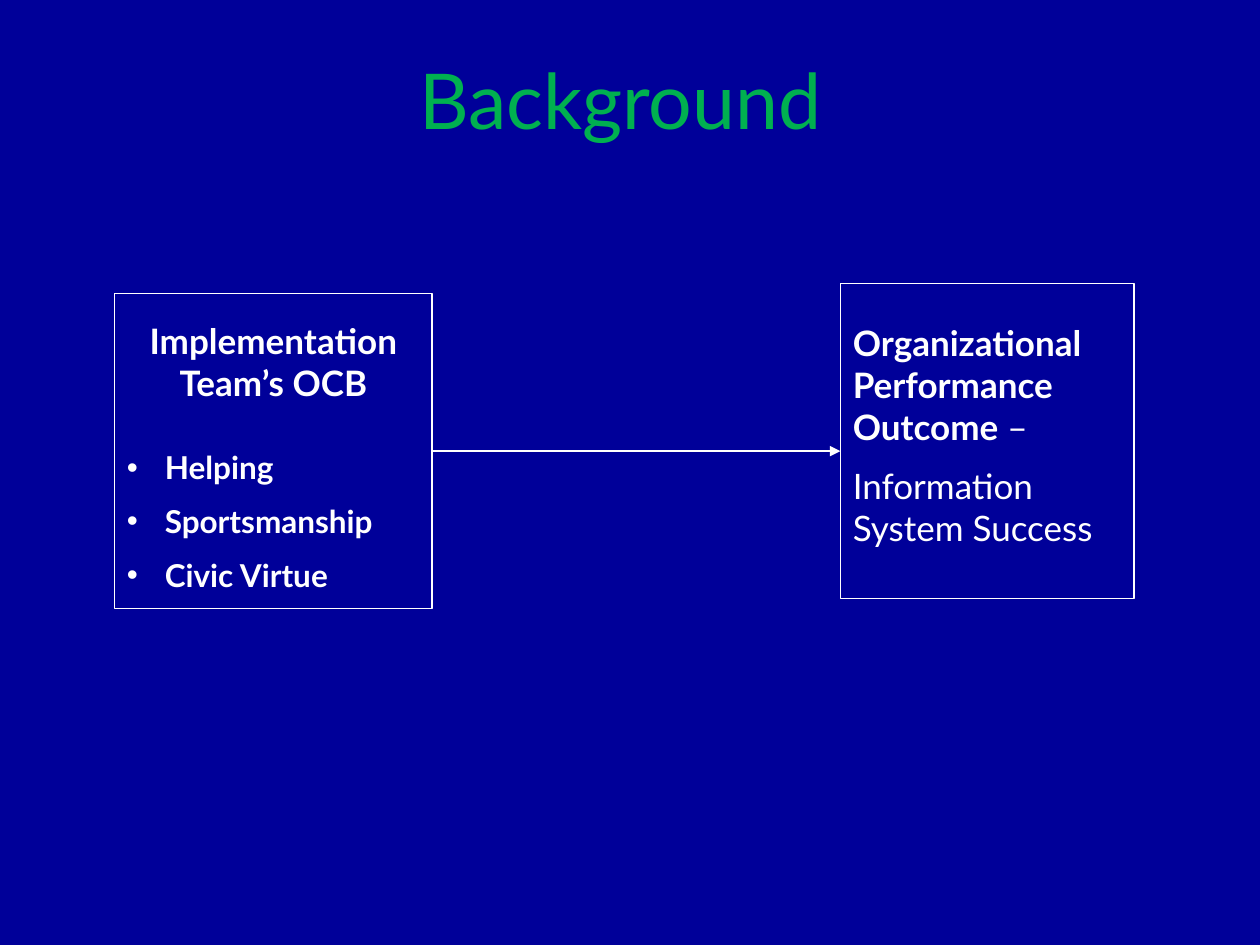
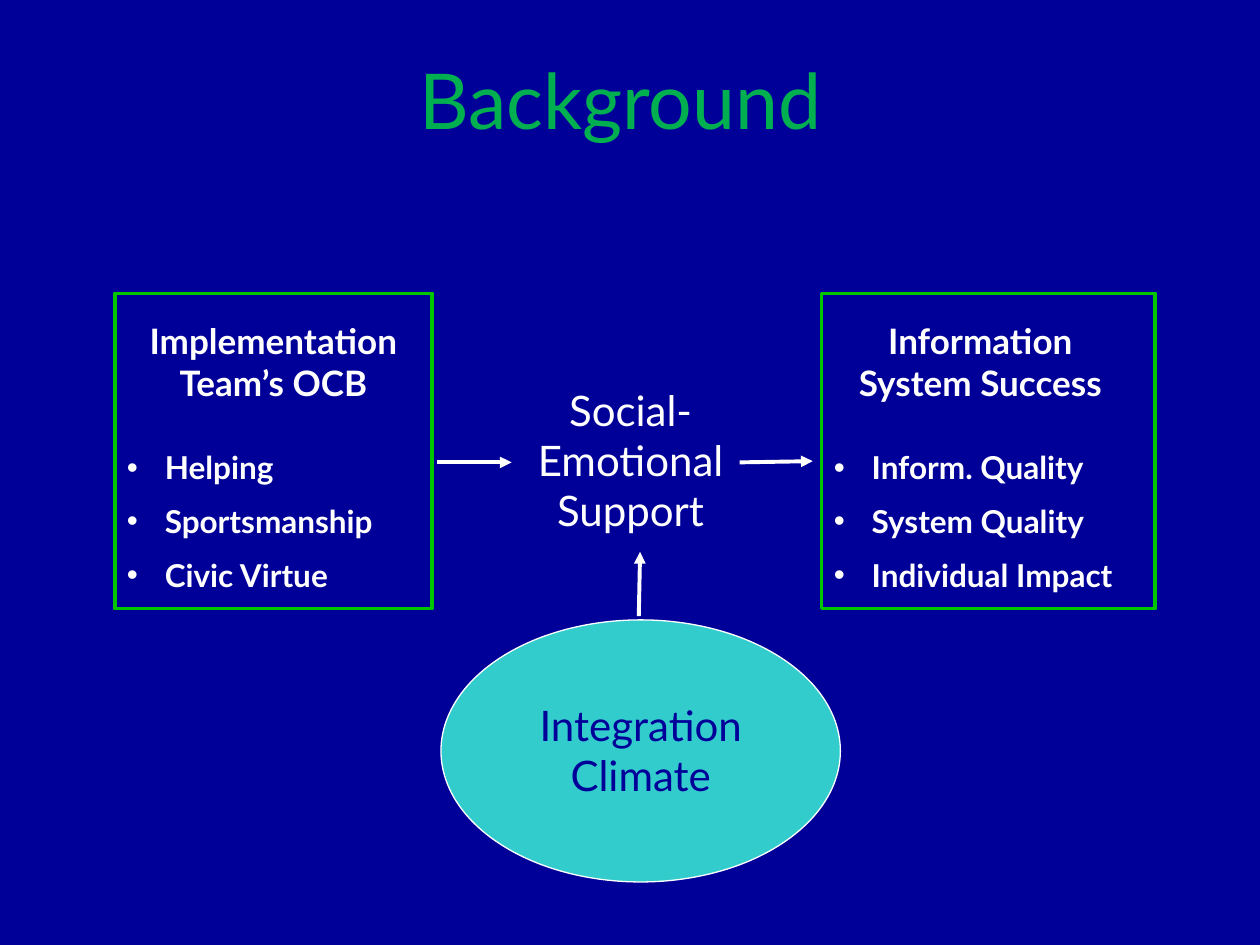
import pptx
import pptx.util
import pptx.dml.color
import pptx.enum.shapes
import pptx.enum.text
import pptx.oxml.ns
from lxml import etree

Inches = pptx.util.Inches
Pt = pptx.util.Pt
SHAPE = pptx.enum.shapes.MSO_SHAPE
ALIGN = pptx.enum.text.PP_ALIGN
ANCHOR = pptx.enum.text.MSO_ANCHOR
AUTO_SIZE = pptx.enum.text.MSO_AUTO_SIZE
qn = pptx.oxml.ns.qn

NAVY, WHITE, TITLE_GREEN = "000099", "FFFFFF", "00B050"
FRAME_GREEN, TEAL = "00C600", "33CCCC"
FONT = "Lato"
THIN, THICK = 0.75, 2.25
BULLET_INDENT = 0.3

OCB_HEADING = "Implementation Team’s OCB"
OCB_PARTS = ["Helping", "Sportsmanship", "Civic Virtue"]
OCB_BOX = (0.91, 2.33, 2.52, 2.5)


def color(hex_code):
    return pptx.dml.color.RGBColor.from_string(hex_code)


def add_bullet(paragraph):
    props = paragraph._p.get_or_add_pPr()
    indent = Inches(BULLET_INDENT)
    props.set("marL", str(indent))
    props.set("indent", str(-indent))
    etree.SubElement(props, qn("a:buFont"), typeface="Arial")
    etree.SubElement(props, qn("a:buChar"), char="•")


def write(shape, paragraphs, size, ink=WHITE, bold=False, align=ALIGN.LEFT,
          anchor=ANCHOR.TOP, bullets=False, grow=True):
    """Each paragraph is a string or a list of (text, bold) runs."""
    frame = shape.text_frame
    frame.word_wrap = True
    frame.vertical_anchor = anchor
    frame.auto_size = AUTO_SIZE.SHAPE_TO_FIT_TEXT if grow else AUTO_SIZE.NONE
    for index, content in enumerate(paragraphs):
        paragraph = frame.add_paragraph() if index else frame.paragraphs[0]
        paragraph.alignment = align
        if index:
            paragraph.space_before = Pt(size / 2)
        if bullets:
            add_bullet(paragraph)
        runs = [(content, bold)] if isinstance(content, str) else content
        for text, run_bold in runs:
            run = paragraph.add_run()
            run.text = text
            look = {"name": FONT, "size": Pt(size), "bold": run_bold}
            for key, value in look.items():
                setattr(run.font, key, value)
            run.font.color.rgb = color(ink)


def add_text(shapes, box, paragraphs, size, **look):
    write(shapes.add_textbox(*map(Inches, box)), paragraphs, size, **look)


def add_outline(shapes, kind, box, line=None, width=THIN, fill=None):
    shape = shapes.add_shape(kind, *map(Inches, box))
    shape.shadow.inherit = False
    if fill:
        shape.fill.solid()
        shape.fill.fore_color.rgb = color(fill)
    else:
        shape.fill.background()
    if line:
        shape.line.color.rgb = color(line)
        shape.line.width = Pt(width)
    else:
        shape.line.fill.background()
    return shape


def add_arrow(shapes, start, end, width):
    arrow = shapes.add_connector(pptx.enum.shapes.MSO_CONNECTOR.STRAIGHT,
                                 *map(Inches, start + end))
    arrow.line.color.rgb = color(WHITE)
    arrow.line.width = Pt(width)
    etree.SubElement(arrow.line._get_or_add_ln(), qn("a:tailEnd"), type="triangle")
    etree.SubElement(arrow._element.spPr, qn("a:effectLst"))
    return arrow


def add_title(slide):
    add_text(slide.shapes, (0.83, 0, 8.19, 1.57), ["Background"], 44, ink=TITLE_GREEN,
             align=ALIGN.CENTER, anchor=ANCHOR.MIDDLE, grow=False)


def add_factor_panel(shapes, box, heading, parts, line, width, list_width):
    """Framed box with a centred heading above a bulleted list."""
    left, top = box[:2]
    frame = add_outline(shapes, SHAPE.RECTANGLE, box, line, width)
    add_text(shapes, (left, top + 0.16, 2.52, 0.77), [heading], 20,
             bold=True, align=ALIGN.CENTER)
    add_text(shapes, (left, top + 1.18, list_width, 1.31), parts, 18,
             bold=True, bullets=True)
    return frame


def add_outcome_panel(shapes, box):
    left, top, width, height = box
    add_outline(shapes, SHAPE.RECTANGLE, box, WHITE)
    outcome = [("Organizational Performance Outcome", True), (" –", False)]
    add_text(shapes, (left, top + 0.25, width, 1.93),
             [outcome, "Information System Success"], 20)


def add_climate(shapes, box):
    """Ellipse with its label and an arrow rising from it."""
    left, top, width, height = box
    add_outline(shapes, SHAPE.OVAL, box, WHITE, fill=TEAL)
    label = add_outline(shapes, SHAPE.RECTANGLE,
                        (left + 0.25, top + 0.58, width - 0.5, 0.91), fill=TEAL)
    write(label, ["Integration Climate"], 24, ink=NAVY, align=ALIGN.CENTER)
    add_arrow(shapes, (left + 1.57, top - 0.03), (left + 1.58, top - 0.54), THICK)


def build_direct_effect(slide):
    shapes = slide.shapes
    ocb = add_factor_panel(shapes, OCB_BOX, OCB_HEADING, OCB_PARTS, WHITE, THIN, 2.36)
    add_outcome_panel(shapes, (6.67, 2.25, 2.33, 2.5))
    effect = add_arrow(shapes, (3.43, 3.58), (6.67, 3.58), THIN)
    effect.begin_connect(ocb, 3)
    add_title(slide)


def build_mediated_effect(slide):
    shapes = slide.shapes
    add_text(shapes, (3.92, 3, 2.17, 1.3), ["Social-Emotional Support"], 24,
             align=ALIGN.CENTER)
    add_arrow(shapes, (3.47, 3.67), (4.06, 3.67), THICK)
    add_arrow(shapes, (5.87, 3.67), (6.45, 3.66), THICK)
    add_climate(shapes.add_group_shape().shapes, (3.5, 4.92, 3.17, 2.08))
    success_parts = ["Inform. Quality", "System Quality", "Individual Impact"]
    panels = [
        (OCB_BOX, OCB_HEADING, OCB_PARTS, 2.36),
        ((6.52, 2.33, 2.65, 2.5), "Information System Success", success_parts, 2.66),
    ]
    for box, heading, parts, list_width in panels:
        add_factor_panel(shapes.add_group_shape().shapes, box, heading, parts,
                         FRAME_GREEN, THICK, list_width)
    add_title(slide)


def main():
    deck = pptx.Presentation()
    deck.slide_width, deck.slide_height = Inches(10), Inches(7.5)
    # Shared background
    backdrop = deck.slide_master.background.fill
    backdrop.solid()
    backdrop.fore_color.rgb = color(NAVY)
    for build in (build_direct_effect, build_mediated_effect):
        build(deck.slides.add_slide(deck.slide_layouts[6]))
    deck.save("out.pptx")


if __name__ == "__main__":
    main()
